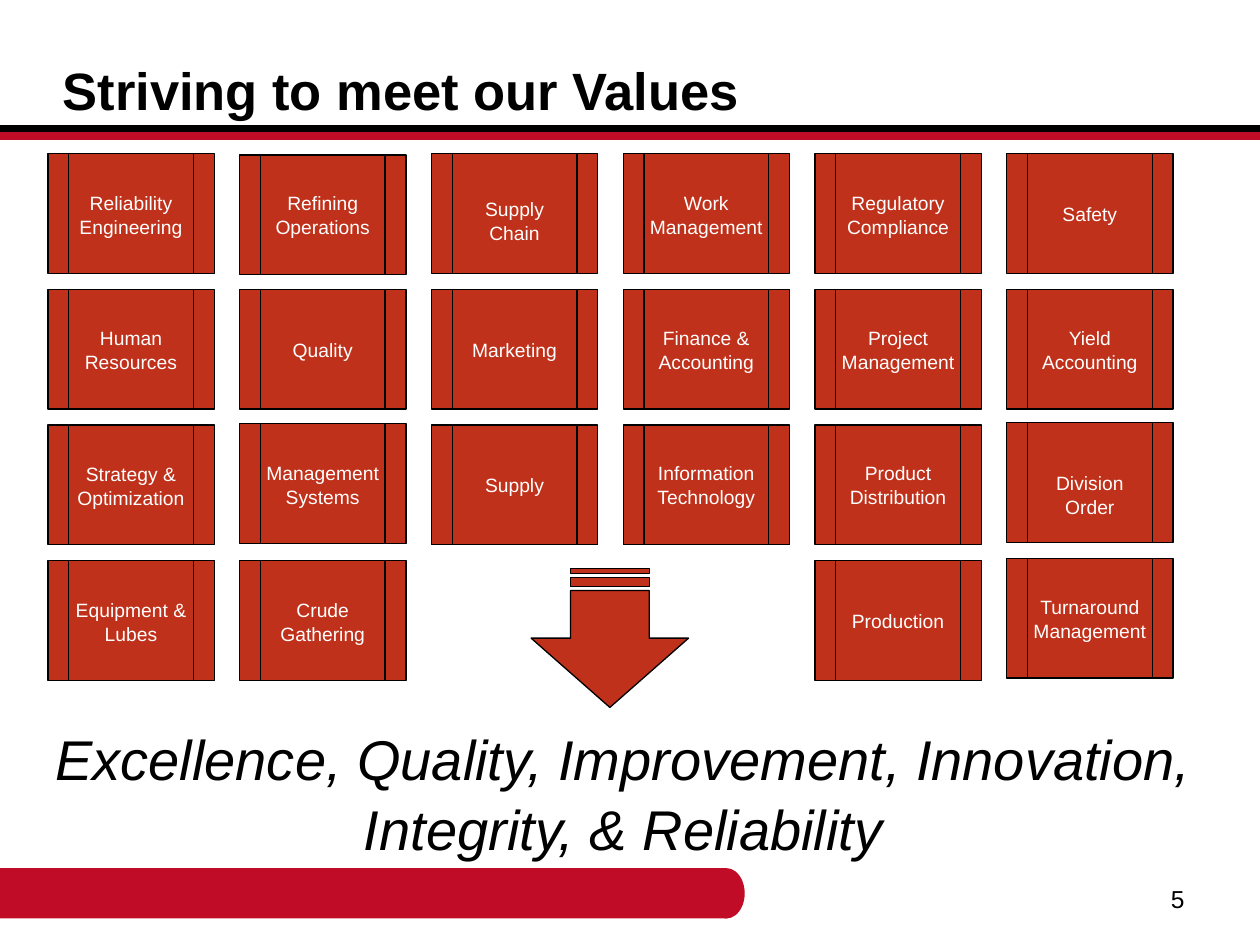
"""Build a slide of business process blocks that lead to the company values."""
from dataclasses import dataclass

from lxml import etree
from pptx import Presentation
from pptx.dml.color import RGBColor
from pptx.enum.shapes import MSO_CONNECTOR, MSO_SHAPE
from pptx.enum.text import MSO_ANCHOR, MSO_AUTO_SIZE, PP_ALIGN
from pptx.oxml.ns import qn
from pptx.util import Inches, Pt

RECT, OVAL = MSO_SHAPE.RECTANGLE, MSO_SHAPE.OVAL
BLOCK = MSO_SHAPE.FLOWCHART_PREDEFINED_PROCESS
ARROW = MSO_SHAPE.STRIPED_RIGHT_ARROW
LINE = MSO_CONNECTOR.STRAIGHT
LEFT, MID, RIGHT = PP_ALIGN.LEFT, PP_ALIGN.CENTER, PP_ALIGN.RIGHT
TOP, BOTTOM = MSO_ANCHOR.TOP, MSO_ANCHOR.BOTTOM
FIXED, GROW = MSO_AUTO_SIZE.NONE, MSO_AUTO_SIZE.SHAPE_TO_FIT_TEXT


@dataclass
class Theme:
    """Colours, font and type sizes of the slide."""
    black: str = "000000"
    white: str = "FFFFFF"
    rust: str = "BF311A"
    red: str = "C00C26"
    face: str = "Arial"
    title: int = 30
    motto: int = 32
    label: int = 11
    number: int = 14
    edge: float = 0.75
    rule: int = 5
    space: float = 1.04


class Deck:
    """Hold the theme and the current slide, and draw each kind of element."""

    def __init__(self, theme):
        """Start a one-slide deck on the blank layout."""
        self.theme = theme
        self.file = Presentation()
        self.file.slide_width, self.file.slide_height = Inches(10), Inches(7.5)
        self.slide = self.file.slides.add_slide(self.file.slide_layouts[6])

    def shape(self, kind, box, fill, edge=None):
        """Draw a filled preset shape, with an outline if an edge is given."""
        item = self.slide.shapes.add_shape(kind, *map(Inches, box))
        item.shadow.inherit = False
        item.fill.solid()
        item.fill.fore_color.rgb = RGBColor.from_string(fill)
        if edge:
            item.line.color.rgb = RGBColor.from_string(edge)
            item.line.width = Pt(self.theme.edge)
        else:
            item.line.fill.background()
        return item

    def rule(self, y, color):
        """Draw a thick line across the slide."""
        item = self.slide.shapes.add_connector(
            LINE, Inches(0), Inches(y), Inches(10), Inches(y))
        item.line.color.rgb = RGBColor.from_string(color)
        item.line.width = Pt(self.theme.rule)
        etree.SubElement(item._element.spPr, qn("a:effectLst"))

    def text(self, words, box, size, color, align=MID, anchor=TOP, fit=GROW, **style):
        """Write one paragraph in a wrapped text box."""
        frame = self.slide.shapes.add_textbox(*map(Inches, box)).text_frame
        para = frame.paragraphs[0]
        para.text = words
        para.font.color.rgb = RGBColor.from_string(color)
        form = {
            frame: {"word_wrap": True, "auto_size": fit, "vertical_anchor": anchor},
            para: {"alignment": align, "line_spacing": self.theme.space},
            para.font: {"name": self.theme.face, "size": Pt(size), **style},
        }
        for item, values in form.items():
            for key, value in values.items():
                setattr(item, key, value)

    def block(self, name, x, y, drop, nudge):
        """Draw a process block, with its label centred on the grid cell."""
        look = self.theme
        self.shape(BLOCK, (x, y + drop, 1.32, 0.95), look.rust, look.black)
        high = 0.47 if " " in name else 0.29
        place = (x + 0.11, y + nudge + (0.95 - high) / 2, 1.1, high)
        self.text(name, place, look.label, look.white)


GRID = [
    ["Reliability Engineering", "Refining Operations", "Supply Chain",
     "Work Management", "Regulatory Compliance", "Safety"],
    ["Human Resources", "Quality", "Marketing",
     "Finance & Accounting", "Project Management", "Yield Accounting"],
    ["Strategy & Optimization", "Management Systems", "Supply",
     "Information Technology", "Product Distribution", "Division Order"],
    ["Equipment & Lubes", "Crude Gathering", None,
     None, "Production", "Turnaround Management"],
]
SHIFT = {
    "Refining Operations": (0.01, 0),
    "Supply Chain": (0, 0.05),
    "Management Systems": (-0.01, -0.01),
    "Information Technology": (0, -0.01),
    "Product Distribution": (0, -0.01),
    "Division Order": (-0.02, 0.07),
    "Turnaround Management": (-0.02, -0.02),
}


def main():
    """Draw the slide and save it."""
    look = Theme()
    deck = Deck(look)
    deck.shape(RECT, (0, 6.89, 5.77, 0.4), look.red)
    deck.shape(OVAL, (5.62, 6.89, 0.29, 0.4), look.red)
    deck.rule(1.03, look.black)
    deck.rule(1.08, look.red)
    deck.text("Striving to meet our Values", (0.4, 0.11, 9, 0.9), look.title,
              look.black, LEFT, BOTTOM, FIXED, bold=True)
    deck.text("5", (8.77, 6.96, 0.73, 0.52), look.number, look.black, RIGHT, fit=FIXED)

    across, down = (7.99 - 0.38) / 5, (4.45 - 1.22) / 3
    for row, names in enumerate(GRID):
        for col, name in enumerate(names):
            if name:
                deck.block(name, 0.38 + col * across, 1.22 + row * down,
                           *SHIFT.get(name, (0, 0)))

    deck.text("Excellence, Quality, Improvement, Innovation, Integrity, & Reliability",
              (0.12, 5.68, 9.66, 1.18), look.motto, look.black, italic=True)
    arrow = deck.shape(ARROW, (4.29, 4.44, 1.1, 1.25), look.rust, look.black)
    arrow.rotation = 90
    arrow.adjustments[1] = 0.5
    deck.file.save("out.pptx")


if __name__ == "__main__":
    main()
